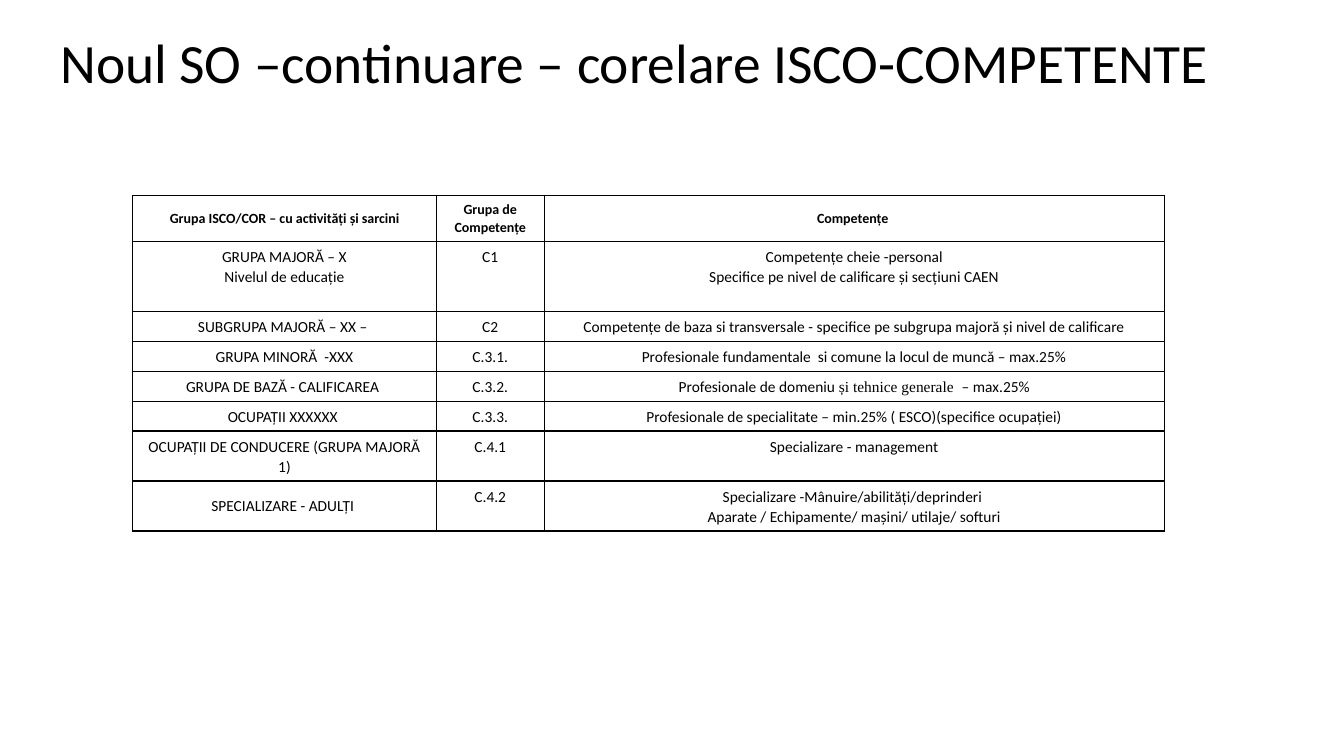
import pptx
import pptx.util
import pptx.dml.color
import pptx.enum.text
import pptx.oxml
import pptx.oxml.ns

Pt = pptx.util.Pt
ANCHOR = pptx.enum.text.MSO_ANCHOR
COLORS = {"text": "000000", "border": "000000", "cell": "FFFFFF"}
BODY_FONT, SERIF_FONT = "Calibri", "Times New Roman"

# Content: each cell is a list of lines; a tuple line holds runs, odd ones in serif
TITLE = "Noul SO –continuare – corelare ISCO-COMPETENTE"
ROWS = [
    (["Grupa ISCO/COR – cu activități și sarcini"],
     ["Grupa de", "Competențe"],
     ["Competențe "]),
    (["GRUPA MAJORĂ – X", "Nivelul de educație"],
     ["C1"],
     ["Competențe cheie -personal",
      "Specifice pe nivel de calificare și secțiuni CAEN"]),
    (["SUBGRUPA MAJORĂ – XX – "],
     ["C2"],
     ["Competențe de baza si transversale - specifice pe subgrupa majoră și nivel de calificare"]),
    (["GRUPA MINORĂ  -XXX"],
     ["C.3.1."],
     ["Profesionale fundamentale  si comune la locul de muncă – max.25%"]),
    (["GRUPA DE BAZĂ - CALIFICAREA "],
     ["C.3.2."],
     [("Profesionale de domeniu ", "și tehnice generale  ", "– max.25%")]),
    (["OCUPAȚII XXXXXX "],
     ["C.3.3."],
     ["Profesionale de specialitate – min.25% ( ESCO)(specifice ocupației)"]),
    (["OCUPAȚII DE CONDUCERE (GRUPA MAJORĂ 1)"],
     ["C.4.1"],
     [" Specializare - management "]),
    (["SPECIALIZARE - ADULȚI "],
     ["C.4.2"],
     ["Specializare -Mânuire/abilități/deprinderi ",
      "Aparate / Echipamente/ mașini/ utilaje/ softuri"]),
]
COLUMN_WIDTHS = [217, 77, 443]
ROW_HEIGHTS = [33, 50] + [21.4] * 4 + [35.7] * 2
TABLE_LEFT, TABLE_TOP = 94.7, 139.4
LEVEL_ROW = 1          # its second lines hang to the left of centre
HANGING_INDENT = -12


def rgb(name):
    return pptx.dml.color.RGBColor.from_string(COLORS[name])


def add_run(paragraph, text, size, font=BODY_FONT, bold=False):
    run = paragraph.add_run()
    run.text = text
    run.font.size = Pt(size)
    run.font.name = font
    run.font.bold = bold
    run.font.color.rgb = rgb("text")


def add_borders(cell):
    properties = cell._tc.get_or_add_tcPr()
    for position, side in enumerate(("lnL", "lnR", "lnT", "lnB")):
        properties.insert(position, pptx.oxml.parse_xml(
            f'<a:{side} {pptx.oxml.ns.nsdecls("a")} w="{Pt(1)}"><a:solidFill>'
            f'<a:srgbClr val="{COLORS["border"]}"/></a:solidFill></a:{side}>'))


def fill_cell(cell, lines, row, column):
    header = row == 0
    cell.fill.solid()
    cell.fill.fore_color.rgb = rgb("cell")
    cell.margin_left = cell.margin_right = Pt(6.5)
    cell.margin_top = cell.margin_bottom = Pt(3.6)
    centred = header or (column == 0 and row != LEVEL_ROW)
    cell.vertical_anchor = ANCHOR.MIDDLE if centred else ANCHOR.TOP
    for index, line in enumerate(lines):
        frame = cell.text_frame
        paragraph = frame.add_paragraph() if index else frame.paragraphs[0]
        paragraph.alignment = pptx.enum.text.PP_ALIGN.CENTER
        paragraph.line_spacing = 1.07
        if row == LEVEL_ROW and index:
            paragraph._p.get_or_add_pPr().set("indent", str(Pt(HANGING_INDENT)))
        runs = line if isinstance(line, tuple) else (line,)
        for order, text in enumerate(runs):
            font = SERIF_FONT if order % 2 else BODY_FONT
            add_run(paragraph, text, 10 if header else 11, font, header)
    add_borders(cell)


def main():
    deck = pptx.Presentation()
    deck.slide_width, deck.slide_height = Pt(960), Pt(540)
    slide = deck.slides.add_slide(deck.slide_layouts[6])

    # Title
    title = slide.shapes.add_textbox(Pt(36), Pt(28.8), Pt(858), Pt(36)).text_frame
    title.word_wrap = True
    title.vertical_anchor = ANCHOR.MIDDLE
    title.paragraphs[0].line_spacing = 0.9
    add_run(title.paragraphs[0], TITLE, 39.6)

    # Correlation table
    correlation = slide.shapes.add_table(
        len(ROWS), len(COLUMN_WIDTHS), Pt(TABLE_LEFT), Pt(TABLE_TOP),
        Pt(sum(COLUMN_WIDTHS)), Pt(sum(ROW_HEIGHTS))).table
    correlation.first_row = correlation.horz_banding = False
    for column, width in enumerate(COLUMN_WIDTHS):
        correlation.columns[column].width = Pt(width)
    for row, (height, cells) in enumerate(zip(ROW_HEIGHTS, ROWS)):
        correlation.rows[row].height = Pt(height)
        for column, lines in enumerate(cells):
            fill_cell(correlation.cell(row, column), lines, row, column)

    deck.save("out.pptx")


if __name__ == "__main__":
    main()
